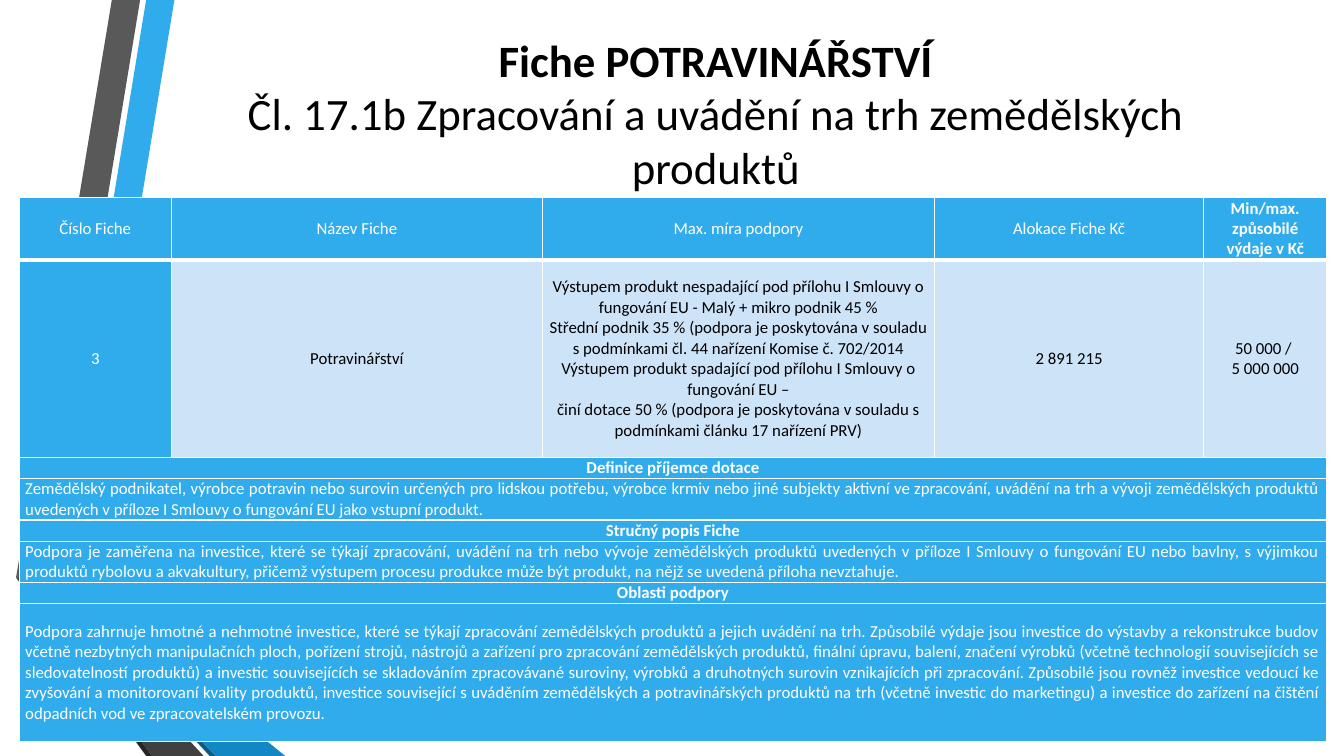
"""Build the slide on the food industry grant scheme with its table of conditions."""
import dataclasses
import typing

import lxml.etree
import pptx
import pptx.dml.color
import pptx.enum.text
import pptx.oxml.ns
import pptx.util

Inches = pptx.util.Inches
ALIGN = pptx.enum.text.PP_ALIGN
MIDDLE = pptx.enum.text.MSO_ANCHOR.MIDDLE

COLOURS = {
    "white": "FFFFFF",
    "black": "000000",
    "blue": "30ACEC",
    "mid blue": "1287C3",
    "deep blue": "0C5A82",
    "pale blue": "CDE3F8",
    "grey": "595959",
    "dark grey": "404040",
    "darkest grey": "262626",
}
CELL_FORMAT = {
    "vertical_anchor": MIDDLE,
    "margin_left": Inches(0.06),
    "margin_right": Inches(0.06),
    "margin_top": 0,
    "margin_bottom": 0,
}
TITLE_FORMAT = {"word_wrap": True, "vertical_anchor": MIDDLE}
COLUMN_WIDTHS = (1.51, 3.68, 3.89, 2.67, 1.22)
ROW_HEIGHTS = (0.62, 1.96, 0.21, 0.41, 0.21, 0.41, 0.21, 1.37)


@dataclasses.dataclass(frozen=True)
class Ribbon:
    colour: str
    points: tuple[tuple[float, float], ...]


@dataclasses.dataclass(frozen=True)
class CellText:
    paragraphs: tuple[str, ...]
    fill: str = "blue"
    colour: str = "white"
    bold: bool = False
    alignment: typing.Any = ALIGN.CENTER


@dataclasses.dataclass(frozen=True)
class Section:
    heading: str
    body: str


RIBBONS = (
    Ribbon("blue", ((0.5, 5.78), (0.77, 5.83), (1.73, 0), (1.45, 0))),
    Ribbon("grey", ((1.39, 0), (1.11, 0), (0.16, 5.73), (0.44, 5.77))),
    Ribbon("darkest grey", ((0.16, 5.73), (1.45, 7.5), (1.51, 7.5))),
    Ribbon("deep blue", ((0.5, 5.79), (2.08, 7.5), (2.14, 7.5))),
    Ribbon("mid blue", ((0.5, 5.79), (2.14, 7.5), (2.83, 7.5), (0.77, 5.83), (0.5, 5.78))),
    Ribbon("dark grey", ((2.02, 7.5), (0.48, 5.83), (0.43, 5.77), (0.16, 5.73), (1.51, 7.5))),
)
HEADERS = ("Číslo Fiche", "Název Fiche", "Max. míra podpory", "Alokace Fiche Kč",
           "Min/max. způsobilé výdaje v Kč")
SUPPORT_RATES = (
    "Výstupem produkt nespadající pod přílohu I Smlouvy o fungování EU - Malý + mikro podnik 45 %",
    "Střední podnik 35 % (podpora je poskytována v souladu s podmínkami čl. 44 nařízení Komise č. 702/2014",
    "Výstupem produkt spadající pod přílohu I Smlouvy o fungování EU –",
    "činí dotace 50 % (podpora je poskytována v souladu s podmínkami článku 17 nařízení PRV)",
)
SCHEME_VALUES = (("Potravinářství",), SUPPORT_RATES, ("2 891 215",), ("50 000 / ", "5 000 000"))
SECTIONS = (
    Section(
        "Definice příjemce dotace",
        "Zemědělský podnikatel, výrobce potravin nebo surovin určených pro lidskou potřebu, "
        "výrobce krmiv nebo jiné subjekty aktivní ve zpracování, uvádění na trh a vývoji "
        "zemědělských produktů uvedených v příloze I Smlouvy o fungování EU jako vstupní produkt.",
    ),
    Section(
        "Stručný popis Fiche",
        "Podpora je zaměřena na investice, které se týkají zpracování, uvádění na trh nebo vývoje "
        "zemědělských produktů uvedených v příloze I Smlouvy o fungování EU nebo bavlny, "
        "s výjimkou produktů rybolovu a akvakultury, přičemž výstupem procesu produkce může být "
        "produkt, na nějž se uvedená příloha nevztahuje.",
    ),
    Section(
        "Oblasti podpory",
        "Podpora zahrnuje hmotné a nehmotné investice, které se týkají zpracování zemědělských "
        "produktů a jejich uvádění na trh. Způsobilé výdaje jsou investice do výstavby a "
        "rekonstrukce budov včetně nezbytných manipulačních ploch, pořízení strojů, nástrojů a "
        "zařízení pro zpracování zemědělských produktů, finální úpravu, balení, značení výrobků "
        "(včetně technologií souvisejících se sledovatelností produktů) a investic souvisejících "
        "se skladováním zpracovávané suroviny, výrobků a druhotných surovin vznikajících při "
        "zpracování. Způsobilé jsou rovněž investice vedoucí ke zvyšování a monitorovaní kvality "
        "produktů, investice související s uváděním zemědělských a potravinářských produktů na trh "
        "(včetně investic do marketingu) a investice do zařízení na čištění odpadních vod ve "
        "zpracovatelském provozu. ",
    ),
)


def rgb(colour: str) -> pptx.dml.color.RGBColor:
    return pptx.dml.color.RGBColor.from_string(COLOURS[colour])


def apply_format(target: typing.Any, values: dict[str, typing.Any]) -> None:
    for name, value in values.items():
        setattr(target, name, value)


def add_run(paragraph: typing.Any, text: str, size: int, colour: str, bold: bool) -> None:
    run = paragraph.add_run()
    run.text = text
    apply_format(run.font, {"name": "Calibri", "size": pptx.util.Pt(size), "bold": bold})
    run.font.color.rgb = rgb(colour)


def draw_ribbon(slide: typing.Any, ribbon: Ribbon) -> None:
    points = [(Inches(x), Inches(y)) for x, y in ribbon.points]
    builder = slide.shapes.build_freeform(*points[0])
    builder.add_line_segments(points[1:], close=True)
    shape = builder.convert_to_shape()
    shape.shadow.inherit = False
    shape.fill.solid()
    shape.fill.fore_color.rgb = rgb(ribbon.colour)
    shape.line.fill.background()


def draw_title(slide: typing.Any) -> None:
    box = slide.shapes.add_textbox(Inches(1.62), Inches(0.16), Inches(10.96), Inches(1.92))
    apply_format(box.text_frame, TITLE_FORMAT)
    paragraph = box.text_frame.paragraphs[0]
    paragraph.alignment = ALIGN.CENTER
    add_run(paragraph, "Fiche POTRAVINÁŘSTVÍ", 32, "black", True)
    paragraph.add_line_break()
    add_run(paragraph, "Čl. 17.1b Zpracování a uvádění na trh zemědělských produktů", 32, "black", False)


def set_borders(cell: typing.Any, widths: dict[str, int]) -> None:
    qn = pptx.oxml.ns.qn
    properties = cell._tc.get_or_add_tcPr()
    for side, points in widths.items():
        line = lxml.etree.SubElement(properties, qn(f"a:ln{side}"), w=str(pptx.util.Pt(points)))
        fill = lxml.etree.SubElement(line, qn("a:solidFill"))
        lxml.etree.SubElement(fill, qn("a:srgbClr"), val=COLOURS["white"])


def fill_cell(cell: typing.Any, content: CellText) -> None:
    apply_format(cell, CELL_FORMAT)
    for index, text in enumerate(content.paragraphs):
        frame = cell.text_frame
        paragraph = frame.add_paragraph() if index else frame.paragraphs[0]
        paragraph.alignment = content.alignment
        add_run(paragraph, text, 12, content.colour, content.bold)
    cell.fill.solid()
    cell.fill.fore_color.rgb = rgb(content.fill)


def table_rows() -> list[list[CellText]]:
    rows = [
        [CellText((header,), bold=header == HEADERS[-1]) for header in HEADERS],
        [CellText(("3",))] + [CellText(value, "pale blue", "black") for value in SCHEME_VALUES],
    ]
    for section in SECTIONS:
        rows.append([CellText((section.heading,), bold=True)])
        rows.append([CellText((section.body,), alignment=ALIGN.JUSTIFY)])
    return rows


def draw_table(slide: typing.Any) -> None:
    table = slide.shapes.add_table(
        len(ROW_HEIGHTS), len(COLUMN_WIDTHS), Inches(0.19), Inches(1.96),
        Inches(sum(COLUMN_WIDTHS)), Inches(sum(ROW_HEIGHTS)),
    ).table
    for column, width in zip(table.columns, COLUMN_WIDTHS):
        column.width = Inches(width)
    for index, contents in enumerate(table_rows()):
        table.rows[index].height = Inches(ROW_HEIGHTS[index])
        for cell in table.rows[index].cells:
            set_borders(cell, {"L": 1, "R": 1, "T": 3 if index == 1 else 1, "B": 3 if index == 0 else 1})
        if len(contents) == 1:
            table.cell(index, 0).merge(table.cell(index, len(COLUMN_WIDTHS) - 1))
        for position, content in enumerate(contents):
            fill_cell(table.cell(index, position), content)


def main() -> None:
    presentation = pptx.Presentation()
    apply_format(presentation, {"slide_width": Inches(13.33), "slide_height": Inches(7.5)})
    slide = presentation.slides.add_slide(presentation.slide_layouts[6])
    for ribbon in RIBBONS:
        draw_ribbon(slide, ribbon)
    draw_title(slide)
    draw_table(slide)
    presentation.save("out.pptx")


if __name__ == "__main__":
    main()
